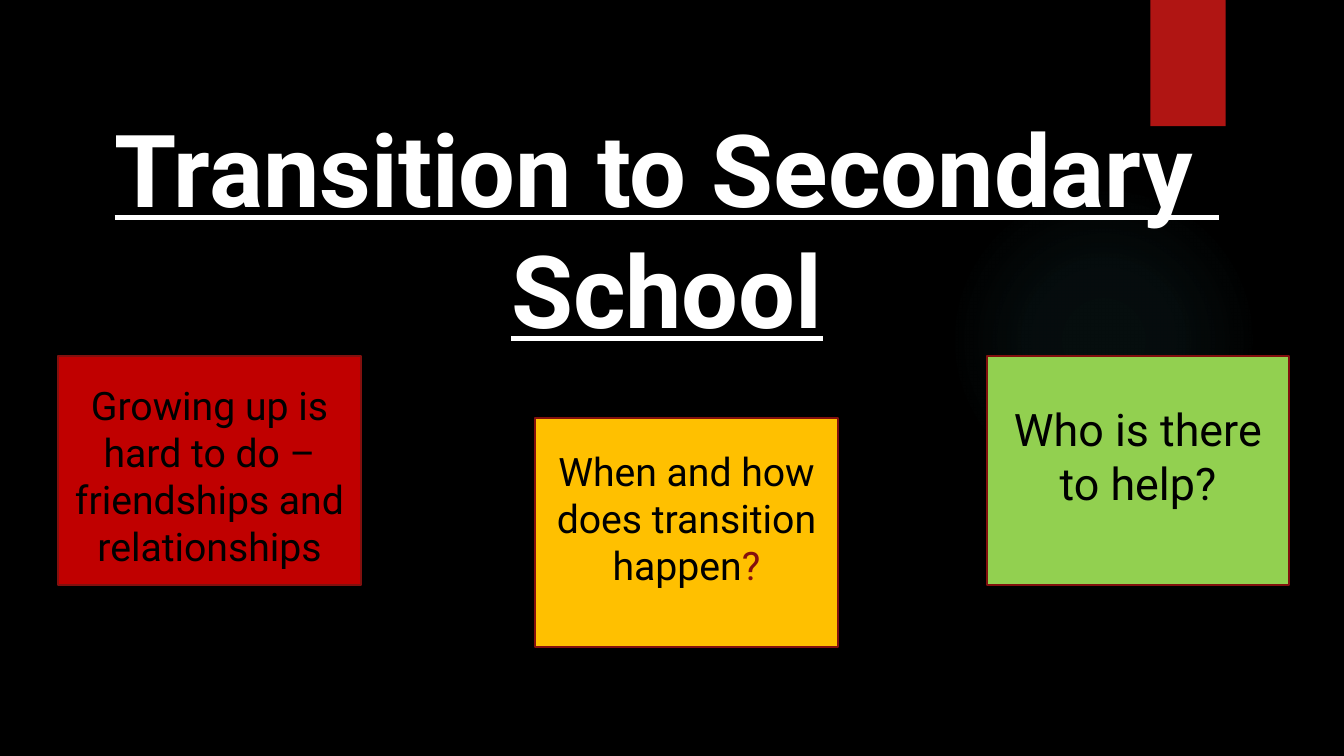
from dataclasses import dataclass

from lxml.etree import fromstring
from pptx import Presentation
from pptx.dml.color import RGBColor as RGB
from pptx.enum.shapes import MSO_SHAPE as Shape
from pptx.enum.text import MSO_ANCHOR as Anchor, PP_ALIGN as Align
from pptx.util import Cm, Pt

TITLE = [("Transition to Secondary ", Align.LEFT), ("School", Align.CENTER)]

# left, top, fill, size, extra top inset, extra bottom inset, runs
CARDS = [
    (1.47, 8.97, "red", 28, 0.25, 0,
     [("Growing up is hard to do – friendships and relationships", "ink")]),
    (13.49, 10.54, "amber", 28, 0, 0.74,
     [("When and how does transition happen", "ink"), ("?", "mark")]),
    (24.87, 8.97, "green", 32, 0, 0.74,
     [("Who is there to help?", "ink")]),
]
CARD_W, CARD_H = 7.62, 5.77
PAD = 0.13
GLOW = [(0, 7), (36, 6), (69, 0)]  # position and opacity, percent


@dataclass(frozen=True)
class Theme:
    font: str = "Roboto"
    title: int = 72
    back: str = "000000"
    ink: str = "000000"
    white: str = "FFFFFF"
    tab: str = "B01513"
    glow: str = "50B9C1"
    edge: str = "82100E"
    mark: str = "84100E"
    red: str = "C00000"
    amber: str = "FFC000"
    green: str = "92D050"

    def color(self, name):
        return RGB.from_string(getattr(self, name))


theme = Theme()


def add_box(slide, kind, left, top, width, height, fill):
    box = slide.shapes.add_shape(kind, Cm(left), Cm(top), Cm(width), Cm(height))
    box.shadow.inherit = False
    box.fill.solid()
    box.fill.fore_color.rgb = theme.color(fill)
    box.line.fill.background()
    return box


def add_glow(slide):
    """Add a faint round light that fades out from its centre."""
    ball = add_box(slide, Shape.OVAL, 23.9, 4.65, 7.82, 7.82, "glow")
    stops = "".join(
        f'<a:gs pos="{pos * 1000}"><a:srgbClr val="{theme.glow}">'
        f'<a:alpha val="{alpha * 1000}"/></a:srgbClr></a:gs>'
        for pos, alpha in GLOW)
    grad = fromstring(
        '<a:gradFill xmlns:a="http://schemas.openxmlformats.org/drawingml/2006/main">'
        f'<a:gsLst>{stops}</a:gsLst><a:path path="circle">'
        '<a:fillToRect l="50000" t="50000" r="50000" b="50000"/></a:path></a:gradFill>')
    props = ball.element.spPr
    props.replace(props.find("{*}solidFill"), grad)


def add_title(slide):
    box = slide.shapes.add_textbox(Cm(2.64), Cm(2.57), Cm(29.31), Cm(6.4))
    frame = box.text_frame
    frame.word_wrap = True
    frame.margin_right = Cm(1.22)
    for i, (text, align) in enumerate(TITLE):
        para = frame.paragraphs[0] if i == 0 else frame.add_paragraph()
        para.text, para.alignment = text, align
        font = para.font
        font.name, font.size = theme.font, Pt(theme.title)
        font.bold = font.underline = True
        font.color.rgb = theme.color("white")


def add_card(slide, left, top, fill, size, above, below, runs):
    card = add_box(slide, Shape.RECTANGLE, left, top, CARD_W, CARD_H, fill)
    card.line.color.rgb = theme.color("edge")
    card.line.width = Pt(1.5)
    frame = card.text_frame
    frame.word_wrap = True
    frame.vertical_anchor = Anchor.MIDDLE
    frame.margin_top, frame.margin_bottom = Cm(PAD + above), Cm(PAD + below)
    para = frame.paragraphs[0]
    para.alignment = Align.CENTER
    para.font.name, para.font.size = theme.font, Pt(size)
    for text, ink in runs:
        run = para.add_run()
        run.text = text
        run.font.color.rgb = theme.color(ink)


def main():
    deck = Presentation()
    deck.slide_width, deck.slide_height = Cm(33.87), Cm(19.05)
    slide = deck.slides.add_slide(deck.slide_layouts[6])
    slide.background.fill.solid()
    slide.background.fill.fore_color.rgb = theme.color("back")
    add_glow(slide)
    add_box(slide, Shape.RECTANGLE, 28.99, 0, 1.9, 3.18, "tab")
    add_title(slide)
    for card in CARDS:
        add_card(slide, *card)
    deck.save("out.pptx")


if __name__ == "__main__":
    main()
